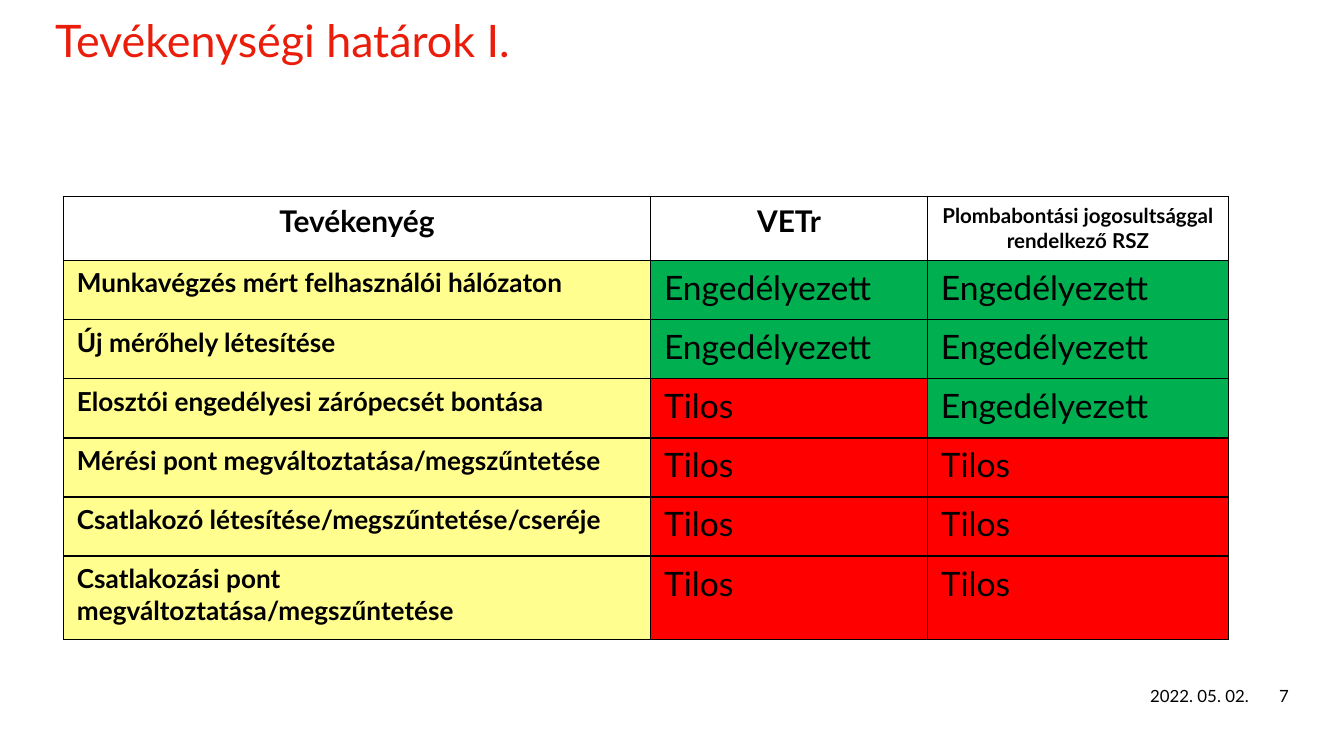
from dataclasses import dataclass

import lxml.etree
import pptx
import pptx.dml.color
import pptx.enum.text
import pptx.oxml.ns
import pptx.util

Pt = pptx.util.Pt
Align = pptx.enum.text.PP_ALIGN


@dataclass(frozen=True)
class Theme:
    font: str = "Lato"
    title_color: str = "EA1C0A"
    ink: str = "000000"
    header_fill: str = "FFFFFF"
    activity_fill: str = "FFFE8E"
    allowed_fill: str = "00B050"
    forbidden_fill: str = "FF0000"
    title_size: int = 24
    header_size: int = 16
    small_header_size: int = 11
    activity_size: int = 14
    status_size: int = 18
    footer_size: int = 9
    border_width: int = 1


THEME = Theme()
ALLOWED = "Engedélyezett"
FORBIDDEN = "Tilos"
STATUS_FILLS = {ALLOWED: THEME.allowed_fill, FORBIDDEN: THEME.forbidden_fill}

HEADERS = [
    ("Tevékenyég", THEME.header_size),
    ("VETr", THEME.header_size),
    ("Plombabontási jogosultsággal rendelkező RSZ", THEME.small_header_size),
]
ACTIVITIES = [
    ("Munkavégzés mért felhasználói hálózaton", ALLOWED, ALLOWED),
    ("Új mérőhely létesítése", ALLOWED, ALLOWED),
    ("Elosztói engedélyesi zárópecsét bontása", FORBIDDEN, ALLOWED),
    ("Mérési pont megváltoztatása/megszűntetése", FORBIDDEN, FORBIDDEN),
    ("Csatlakozó létesítése/megszűntetése/cseréje", FORBIDDEN, FORBIDDEN),
    ("Csatlakozási pont megváltoztatása/megszűntetése", FORBIDDEN, FORBIDDEN),
]
COLUMN_WIDTHS = [314.6, 148.3, 161.3]
ROW_HEIGHTS = [34.3] + [31.7] * 5 + [44.6]


def rgb(color):
    return pptx.dml.color.RGBColor.from_string(color)


def write(frame, text, size, color=THEME.ink, bold=False, align=Align.LEFT):
    frame.text = text
    para = frame.paragraphs[0]
    para.alignment = align
    for span in para.runs:
        span.font.name = THEME.font
        span.font.size = Pt(size)
        span.font.bold = bold
        span.font.color.rgb = rgb(color)
    return para


def add_text(page, bounds, text, size, spacing, color=THEME.ink, align=Align.LEFT):
    box = page.shapes.add_textbox(*map(Pt, bounds))
    frame = box.text_frame
    frame.word_wrap = True
    frame.margin_left = frame.margin_right = 0
    frame.margin_top = frame.margin_bottom = 0
    para = write(frame, text, size, color, align=align)
    para.line_spacing = Pt(spacing)


def add_borders(cell):
    qn = pptx.oxml.ns.qn
    properties = cell._tc.get_or_add_tcPr()
    for side in ("a:lnL", "a:lnR", "a:lnT", "a:lnB"):
        line = lxml.etree.SubElement(properties, qn(side), w=str(Pt(THEME.border_width)))
        fill = lxml.etree.SubElement(line, qn("a:solidFill"))
        lxml.etree.SubElement(fill, qn("a:srgbClr"), val=THEME.ink)


def fill_cell(cell, text, size, fill, bold=False, align=Align.LEFT):
    write(cell.text_frame, text, size, bold=bold, align=align)
    add_borders(cell)
    cell.fill.solid()
    cell.fill.fore_color.rgb = rgb(fill)


def add_activity_table(page):
    frame = page.shapes.add_table(
        len(ROW_HEIGHTS), len(COLUMN_WIDTHS),
        Pt(34), Pt(105.2), Pt(sum(COLUMN_WIDTHS)), Pt(sum(ROW_HEIGHTS)),
    )
    table = frame.table
    table.first_row = False
    table.horz_banding = False
    for column, width in zip(table.columns, COLUMN_WIDTHS):
        column.width = Pt(width)
    for row, height in zip(table.rows, ROW_HEIGHTS):
        row.height = Pt(height)

    for column, (text, size) in enumerate(HEADERS):
        fill_cell(table.cell(0, column), text, size, THEME.header_fill, True, Align.CENTER)
    for row, (activity, *statuses) in enumerate(ACTIVITIES, start=1):
        fill_cell(table.cell(row, 0), activity, THEME.activity_size, THEME.activity_fill, True)
        for column, status in enumerate(statuses, start=1):
            fill_cell(table.cell(row, column), status, THEME.status_size, STATUS_FILLS[status])


def main():
    deck = pptx.Presentation()
    deck.slide_width = Pt(720)
    deck.slide_height = Pt(405)
    page = deck.slides.add_slide(deck.slide_layouts[6])
    add_text(page, (29.5, 10.8, 433.4, 56.9), "Tevékenységi határok I.",
             THEME.title_size, 25, THEME.title_color)
    add_activity_table(page)
    for left, width, text in ((609.1, 59.8, "2022. 05. 02."), (668.9, 21.6, "7")):
        add_text(page, (left, 367.2, width, 11.5), text,
                 THEME.footer_size, 11.2, align=Align.RIGHT)
    deck.save("out.pptx")


if __name__ == "__main__":
    main()
